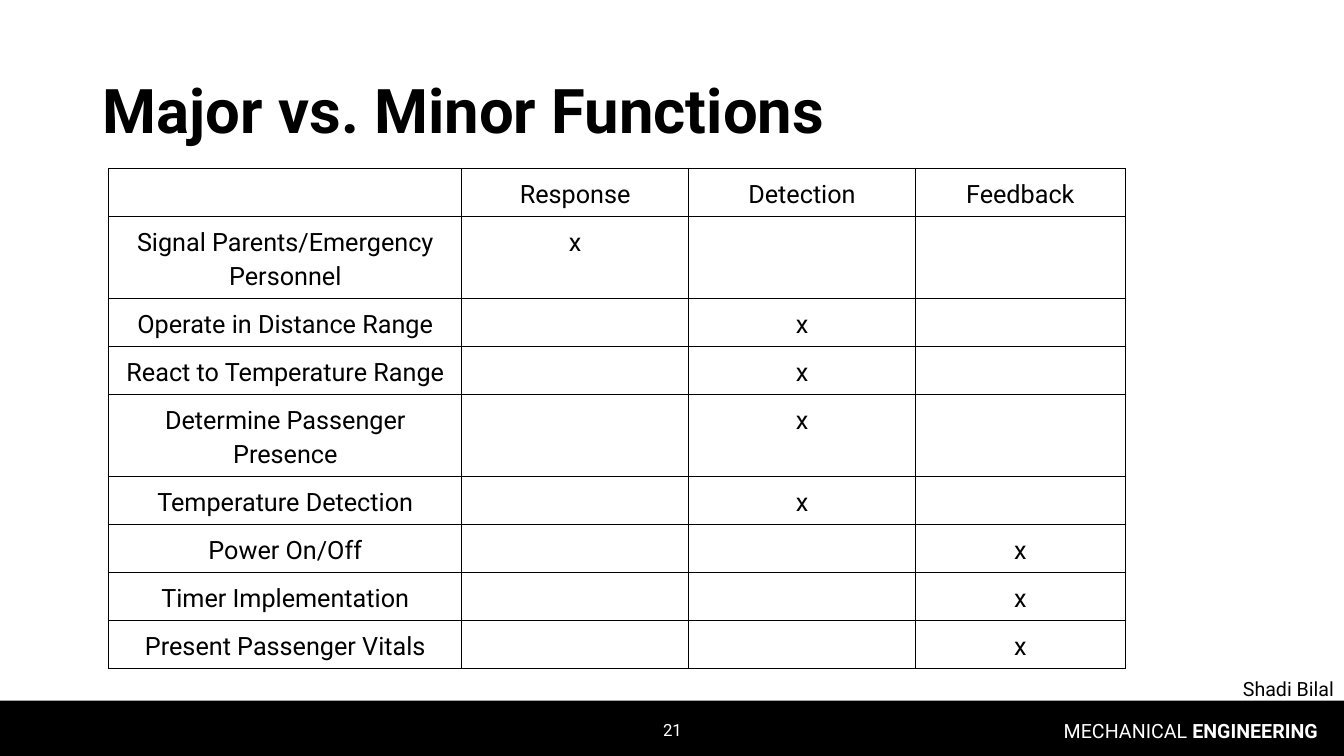
from dataclasses import dataclass

from lxml.etree import SubElement
from pptx import Presentation
from pptx.dml.color import RGBColor
from pptx.enum.shapes import MSO_SHAPE
from pptx.enum.text import MSO_ANCHOR, PP_ALIGN
from pptx.oxml.ns import qn
from pptx.util import Inches, Pt

COLORS = {"black": "000000", "white": "FFFFFF"}
FONT = "Roboto"
COLUMN_WIDTHS = [3.5, 2.25, 2.25, 2.08]
ROW_HEIGHT = 0.41
CELL_MARGIN = 0.07
HEADERS = ["", "Response", "Detection", "Feedback"]


@dataclass
class Function:
    name: str
    category: str


@dataclass
class Label:
    runs: list[str]
    left: float
    top: float
    width: float
    height: float
    size: float
    color: str
    align: PP_ALIGN
    anchor: MSO_ANCHOR = MSO_ANCHOR.TOP
    line_spacing: float = 1.0
    bold_last: bool = False


FUNCTIONS = [
    Function("Signal Parents/Emergency Personnel", "Response"),
    Function("Operate in Distance Range", "Detection"),
    Function("React to Temperature Range", "Detection"),
    Function("Determine Passenger Presence", "Detection"),
    Function("Temperature Detection", "Detection"),
    Function("Power On/Off", "Feedback"),
    Function("Timer Implementation", "Feedback"),
    Function("Present Passenger Vitals", "Feedback"),
]

LABELS = [
    Label(["MECHANICAL ", "ENGINEERING"], 10.17, 7.08, 3, 0.4, 14, "white",
          PP_ALIGN.RIGHT, bold_last=True),
    Label(["Major vs. Minor Functions"], 0.92, 0.4, 11.5, 1.45, 44, "black",
          PP_ALIGN.LEFT, MSO_ANCHOR.MIDDLE, 0.9, True),
    Label(["21"], 5.17, 7.04, 3, 0.4, 12, "white",
          PP_ALIGN.CENTER, MSO_ANCHOR.MIDDLE),
    Label(["Shadi Bilal"], 9.83, 6.69, 3.5, 0.25, 14, "black",
          PP_ALIGN.RIGHT, line_spacing=0.9),
]


def style_paragraph(paragraph, size: float, color: str, align: PP_ALIGN,
                    line_spacing: float) -> None:
    paragraph.alignment = align
    paragraph.line_spacing = line_spacing
    paragraph.font.name = FONT
    paragraph.font.size = Pt(size)
    paragraph.font.color.rgb = RGBColor.from_string(COLORS[color])


def add_footer_bar(slide) -> None:
    bar = slide.shapes.add_shape(MSO_SHAPE.RECTANGLE, 0, Inches(6.95),
                                 Inches(13.33), Inches(0.55))
    bar.shadow.inherit = False
    bar.fill.solid()
    bar.fill.fore_color.rgb = RGBColor.from_string(COLORS["black"])
    bar.line.fill.background()


def add_label(slide, label: Label) -> None:
    shape = slide.shapes.add_textbox(Inches(label.left), Inches(label.top),
                                     Inches(label.width), Inches(label.height))
    frame = shape.text_frame
    frame.word_wrap = True
    frame.vertical_anchor = label.anchor
    paragraph = frame.paragraphs[0]
    for text in label.runs:
        run = paragraph.add_run()
        run.text = text
    if label.bold_last:
        paragraph.runs[-1].font.bold = True
    style_paragraph(paragraph, label.size, label.color, label.align,
                    label.line_spacing)


def add_borders(cell) -> None:
    properties = cell._tc.get_or_add_tcPr()
    for side in ("a:lnL", "a:lnR", "a:lnT", "a:lnB"):
        line = SubElement(properties, qn(side), w=str(Pt(1)))
        fill = SubElement(line, qn("a:solidFill"))
        SubElement(fill, qn("a:srgbClr"), val=COLORS["black"])


def fill_cell(cell, text: str) -> None:
    add_borders(cell)
    cell.fill.background()
    margin = Inches(CELL_MARGIN)
    cell.margin_left = cell.margin_right = margin
    cell.margin_top = cell.margin_bottom = margin
    cell.text = text
    style_paragraph(cell.text_frame.paragraphs[0], 18, "black",
                    PP_ALIGN.CENTER, 1.15)


def add_function_table(slide) -> None:
    rows = [HEADERS] + [
        [function.name] + ["x" if header == function.category else ""
                           for header in HEADERS[1:]]
        for function in FUNCTIONS
    ]
    table = slide.shapes.add_table(
        len(rows), len(HEADERS), Inches(1.08), Inches(1.67),
        Inches(sum(COLUMN_WIDTHS)), Inches(ROW_HEIGHT * len(rows))).table
    table.first_row = False
    table.horz_banding = False
    for column, width in zip(table.columns, COLUMN_WIDTHS):
        column.width = Inches(width)
    for row, texts in zip(table.rows, rows):
        row.height = Inches(ROW_HEIGHT)
        for cell, text in zip(row.cells, texts):
            fill_cell(cell, text)


def main() -> None:
    presentation = Presentation()
    presentation.slide_width = Inches(13.33)
    presentation.slide_height = Inches(7.5)
    slide = presentation.slides.add_slide(presentation.slide_layouts[6])
    add_footer_bar(slide)
    add_function_table(slide)
    for label in LABELS:
        add_label(slide, label)
    presentation.save("out.pptx")


if __name__ == "__main__":
    main()
